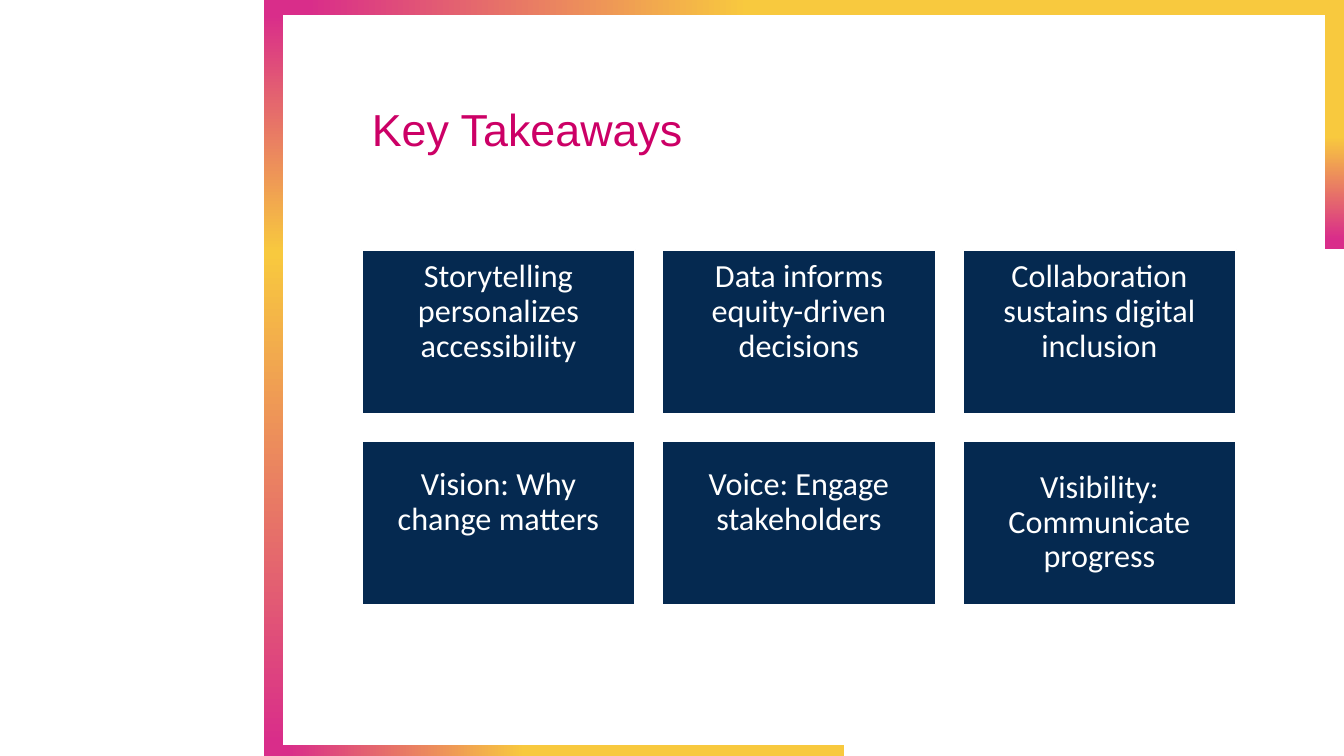
from pptx import Presentation
from pptx.dml.color import RGBColor
from pptx.enum.shapes import MSO_SHAPE
from pptx.enum.text import MSO_ANCHOR, PP_ALIGN
from pptx.oxml import parse_xml
from pptx.oxml.ns import nsdecls
from pptx.util import Inches, Pt

# Content
TITLE = "Key Takeaways"
TAKEAWAYS = [
    ["Storytelling personalizes accessibility",
     "Data informs equity-driven decisions",
     "Collaboration sustains digital inclusion"],
    ["Vision: Why change matters",
     "Voice: Engage stakeholders",
     "Visibility: Communicate progress"],
]
CENTERED = "Visibility: Communicate progress"  # the others sit above the middle

# Colours
WHITE = RGBColor(0xFF, 0xFF, 0xFF)
NAVY = RGBColor(0x05, 0x29, 0x50)
MAGENTA = RGBColor(0xCC, 0x00, 0x66)
PINK = RGBColor(0xD9, 0x2D, 0x8A)
YELLOW = RGBColor(0xF8, 0xC9, 0x3E)

# Frame bars: left, top, width, height, gradient angle, stops in percent
ACROSS, DOWN = 0, 90
PINK_TO_YELLOW = [(4, PINK), (45, YELLOW)]
BARS = [
    (2.62, 0.15, 0.19, 7.37, DOWN, [(0, PINK), (32, YELLOW), (98, PINK)]),
    (2.62, 0, 10.67, 0.15, ACROSS, PINK_TO_YELLOW),
    (2.62, 7.39, 5.75, 0.15, ACROSS, PINK_TO_YELLOW),
    (13.14, 0, 0.19, 2.47, DOWN, [(55, YELLOW), (96, PINK)]),
]

# Layout
LEFT, TOP = 3.59, 2.48
BOX_W, BOX_H = 2.71, 1.63
STEP_X, STEP_Y = 2.98, 1.89

prs = Presentation()
prs.slide_width, prs.slide_height = Inches(13.33), Inches(7.5)
slide = prs.slides.add_slide(prs.slide_layouts[6])


def add_rect(x, y, w, h):
    sp = slide.shapes.add_shape(MSO_SHAPE.RECTANGLE, Inches(x), Inches(y),
                                Inches(w), Inches(h))
    sp.shadow.inherit = False
    return sp


def add_gradient(sp, angle, stops):
    gs = "".join(f'<a:gs pos="{pos * 1000}"><a:srgbClr val="{color}"/></a:gs>'
                 for pos, color in stops)
    grad = parse_xml(f'<a:gradFill {nsdecls("a")}><a:gsLst>{gs}</a:gsLst>'
                     f'<a:lin ang="{angle * 60000}" scaled="0"/></a:gradFill>')
    sp.element.spPr.find("{*}prstGeom").addnext(grad)


def set_text(sp, text, *, font, size, color, align, top=0.05, bottom=0.05):
    tf = sp.text_frame
    tf.word_wrap = True
    tf.vertical_anchor = MSO_ANCHOR.MIDDLE
    tf.margin_left = tf.margin_right = Inches(0.1)
    tf.margin_top, tf.margin_bottom = Inches(top), Inches(bottom)
    p = tf.paragraphs[0]
    p.alignment, p.line_spacing = align, 0.9
    r = p.add_run()
    r.text = text
    r.font.name, r.font.size = font, Pt(size)
    r.font.color.rgb = color


# Gradient frame
for x, y, w, h, angle, stops in BARS:
    bar = add_rect(x, y, w, h)
    bar.line.fill.background()
    add_gradient(bar, angle, stops)

# Title
title = slide.shapes.add_textbox(Inches(LEFT), Inches(0.9), Inches(8.67), Inches(0.82))
set_text(title, TITLE, font="Arial", size=32, color=MAGENTA, align=PP_ALIGN.LEFT)

# Takeaway boxes
for row, texts in enumerate(TAKEAWAYS):
    for col, text in enumerate(texts):
        box = add_rect(LEFT + col * STEP_X, TOP + row * STEP_Y, BOX_W, BOX_H)
        box.fill.solid()
        box.fill.fore_color.rgb = NAVY
        box.line.color.rgb = WHITE
        box.line.width = Pt(1.5)
        set_text(box, text, font="Calibri", size=23, color=WHITE,
                 align=PP_ALIGN.CENTER, bottom=0.05 if text == CENTERED else 0.45)

prs.save("out.pptx")
